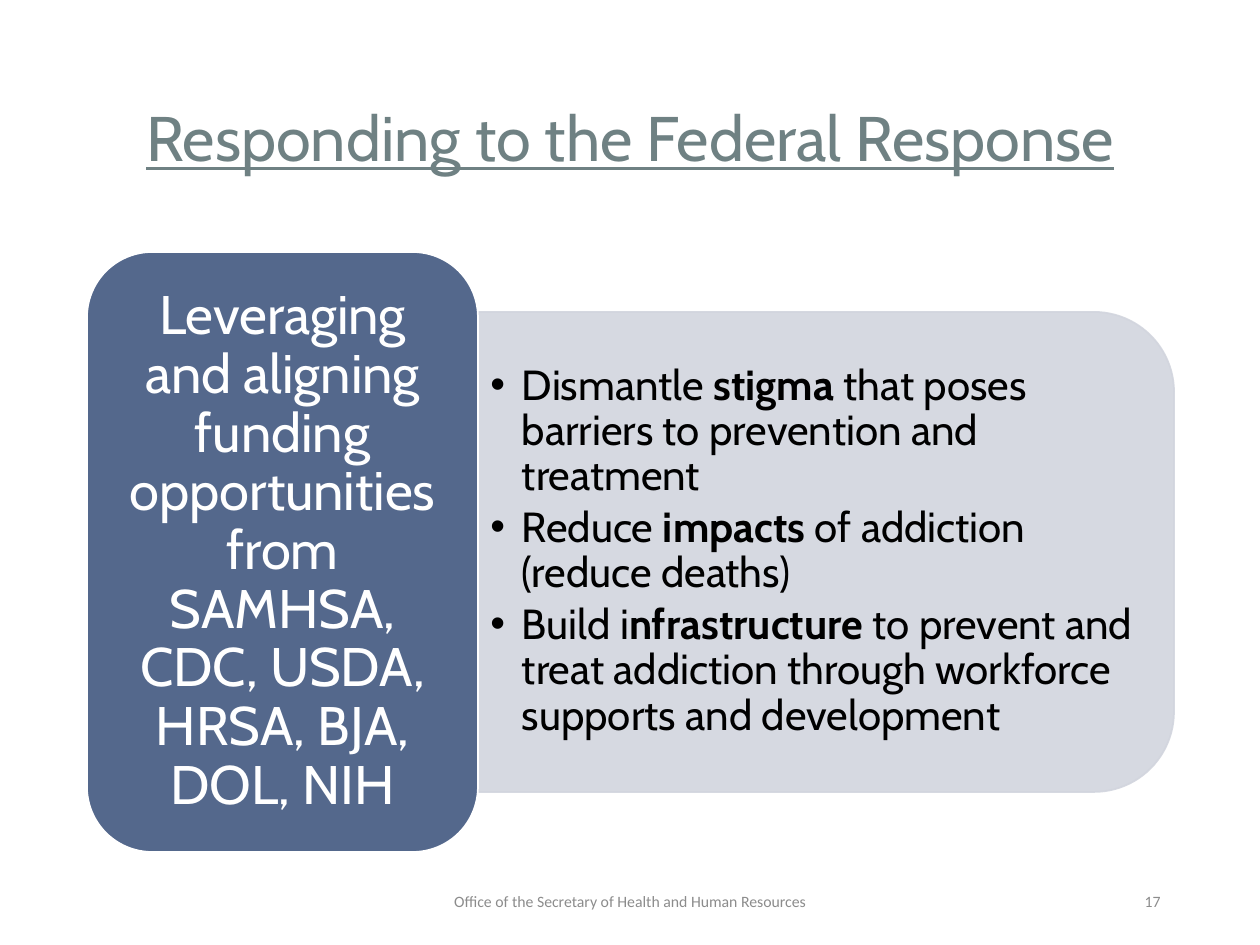
from lxml.etree import SubElement
from pptx import Presentation
from pptx.dml.color import RGBColor
from pptx.enum.shapes import MSO_SHAPE
from pptx.enum.text import MSO_ANCHOR, PP_ALIGN
from pptx.oxml.ns import qn
from pptx.util import Pt

PX = 914400 // 126
COLORS = {"title": "6F8183", "panel": "D2D5DE", "label": "54688C",
          "white": "FFFFFF", "black": "000000", "footer": "8C8C8C"}


def box(*lengths):
    return [n * PX for n in lengths]


def add_run(p, text, color, **font):
    r = p.add_run()
    r.text = text
    r.font.color.rgb = RGBColor.from_string(COLORS[color])
    for name, value in font.items():
        setattr(r.font, name, value)


prs = Presentation()
prs.slide_width, prs.slide_height = box(1260, 945)
s = prs.slides.add_slide(prs.slide_layouts[5])

# Title
title = s.shapes.title
title.left, title.top, title.width, title.height = box(87, 50, 1086, 183)
tf = title.text_frame
tf.vertical_anchor = MSO_ANCHOR.MIDDLE
p = tf.paragraphs[0]
p.alignment, p.line_spacing = PP_ALIGN.CENTER, 0.9
add_run(p, "Responding to the Federal Response", "title",
        name="Cabin", size=Pt(36), underline=True)

# Panel turned on its side, and the label in front of it
shapes = {}
for name, kind, place, fill, line in [
    ("panel", MSO_SHAPE.ROUND_2_SAME_RECTANGLE, (586, 204, 480, 696), "panel", "panel"),
    ("label", MSO_SHAPE.ROUNDED_RECTANGLE, (87, 252, 391, 600), "label", "white"),
]:
    sp = shapes[name] = s.shapes.add_shape(kind, *box(*place))
    sp.shadow.inherit = False
    sp.fill.solid()
    sp.fill.fore_color.rgb = RGBColor.from_string(COLORS[fill])
    sp.line.color.rgb = RGBColor.from_string(COLORS[line])
    sp.line.width = Pt(1)
shapes["panel"].rotation = 90
for clr in shapes["panel"]._element.spPr.iter(qn("a:srgbClr")):
    SubElement(clr, qn("a:alpha"), val="90000")

# Label text
tf = shapes["label"].text_frame
tf.word_wrap, tf.vertical_anchor = True, MSO_ANCHOR.MIDDLE
tf.margin_left, tf.margin_right, tf.margin_top, tf.margin_bottom = box(16, 16, 8, 8)
p = tf.paragraphs[0]
p.alignment, p.line_spacing = PP_ALIGN.CENTER, 0.9
add_run(p, "Leveraging and aligning funding opportunities from "
        "SAMHSA, CDC, USDA, HRSA, BJA, DOL, NIH", "white", name="Cabin", size=Pt(31))

# Bullets: plain, bold, plain
bullets = [
    ("Dismantle ", "stigma ", "that poses barriers to prevention and treatment"),
    ("Reduce ", "impacts ", "of addiction (reduce deaths)"),
    ("Build i", "nfrastructure",
     " to prevent and treat addiction through workforce supports and development"),
]
tf = s.shapes.add_textbox(*box(478, 335, 672, 433)).text_frame
tf.word_wrap, tf.vertical_anchor = True, MSO_ANCHOR.MIDDLE
for i, parts in enumerate(bullets):
    p = tf.add_paragraph() if i else tf.paragraphs[0]
    p.level, p.line_spacing, p.space_after = 1, 0.9, Pt(3.6)
    pPr = p._p.get_or_add_pPr()
    pPr.set("marL", "228600")
    pPr.set("indent", "-228600")
    SubElement(pPr, qn("a:buFont"), typeface="Arial")
    SubElement(pPr, qn("a:buChar"), char="•")
    for j, text in enumerate(parts):
        add_run(p, text, "black", name="Cabin", size=Pt(24), bold=j == 1)

# Footer and slide number
for text, place, align in [
    ("Office of the Secretary of Health and Human Resources",
     (417, 876, 426, 50), PP_ALIGN.CENTER),
    ("17", (890, 876, 283, 50), PP_ALIGN.RIGHT),
]:
    tf = s.shapes.add_textbox(*box(*place)).text_frame
    tf.word_wrap, tf.vertical_anchor = True, MSO_ANCHOR.MIDDLE
    p = tf.paragraphs[0]
    p.alignment = align
    add_run(p, text, "footer", name="Calibri", size=Pt(9))

prs.save("out.pptx")
